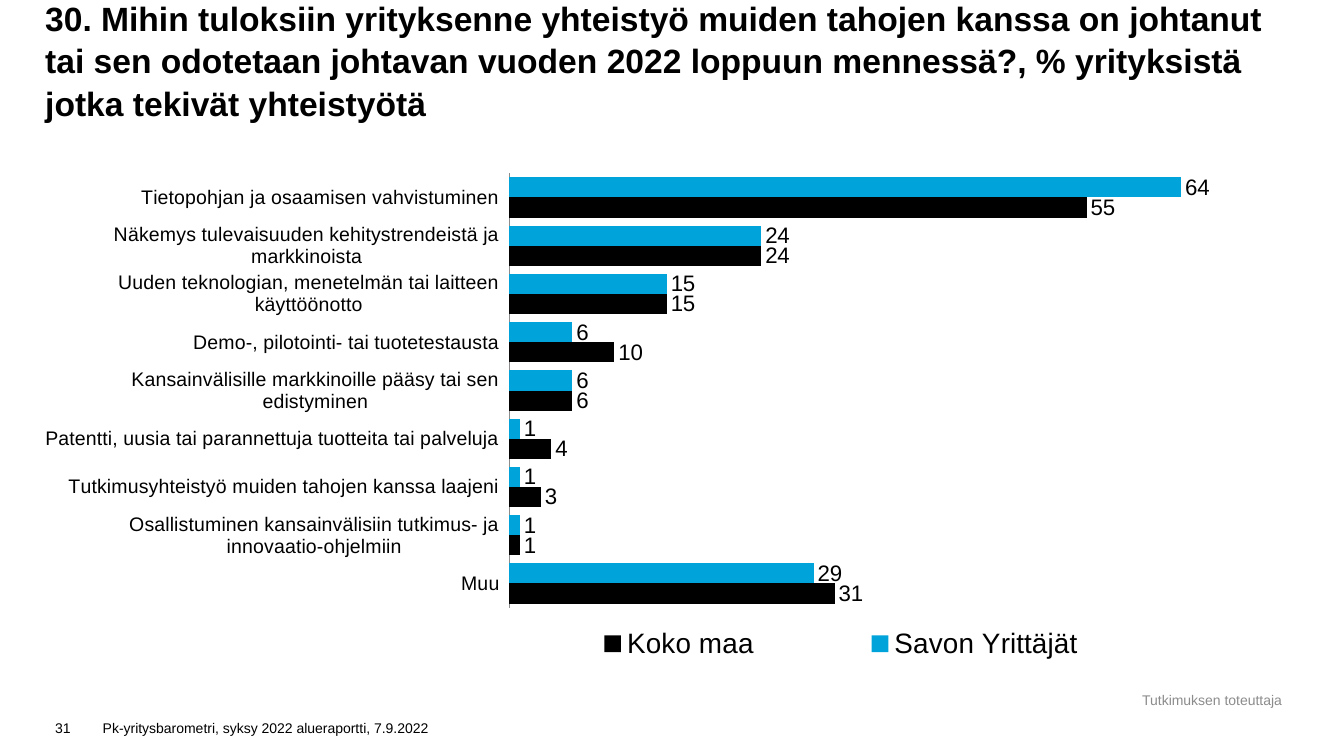
from lxml import etree
from pptx import Presentation
from pptx.chart.data import CategoryChartData
from pptx.dml.color import RGBColor
from pptx.enum.chart import (XL_CHART_TYPE, XL_LABEL_POSITION, XL_LEGEND_POSITION,
                             XL_TICK_LABEL_POSITION, XL_TICK_MARK)
from pptx.enum.text import MSO_ANCHOR, PP_ALIGN
from pptx.oxml.ns import qn
from pptx.util import Cm, Pt

BAR = XL_CHART_TYPE.BAR_CLUSTERED
OUTSIDE = XL_LABEL_POSITION.OUTSIDE_END
RIGHT = XL_LEGEND_POSITION.RIGHT
LOW = XL_TICK_LABEL_POSITION.LOW
NO_TICK = XL_TICK_MARK.NONE
BOTTOM, MIDDLE = MSO_ANCHOR.BOTTOM, MSO_ANCHOR.MIDDLE
LEFT, CENTER = PP_ALIGN.LEFT, PP_ALIGN.CENTER

# Content
TITLE = ("30. Mihin tuloksiin yrityksenne yhteistyö muiden tahojen kanssa on johtanut "
         "tai sen odotetaan johtavan vuoden 2022 loppuun mennessä?, % yrityksistä "
         "jotka tekivät yhteistyötä")
PAGE = "31"
FOOTER = "Pk-yritysbarometri, syksy 2022 alueraportti, 7.9.2022"
CREDIT = "Tutkimuksen toteuttaja"
SERIES = ("Savon Yrittäjät", "Koko maa")
RESULTS = [
    ("Tietopohjan ja osaamisen vahvistuminen", 64, 55),
    ("Näkemys tulevaisuuden kehitystrendeistä ja markkinoista", 24, 24),
    ("Uuden teknologian, menetelmän tai laitteen käyttöönotto", 15, 15),
    ("Demo-, pilotointi- tai tuotetestausta", 6, 10),
    ("Kansainvälisille markkinoille pääsy tai sen edistyminen", 6, 6),
    ("Patentti, uusia tai parannettuja tuotteita tai palveluja", 1, 4),
    ("Tutkimusyhteistyö muiden tahojen kanssa laajeni", 1, 3),
    ("Osallistuminen kansainvälisiin tutkimus- ja innovaatio-ohjelmiin", 1, 1),
    ("Muu", 29, 31),
]

THEME = {
    "font": "Arial",
    "text": RGBColor(0x00, 0x00, 0x00),
    "muted": RGBColor(0x8C, 0x8C, 0x8C),
    "axis": RGBColor(0x8C, 0x8C, 0x8C),
    "series": (RGBColor(0x00, 0xA3, 0xDA), RGBColor(0x00, 0x00, 0x00)),
    "title": Pt(24), "legend": Pt(20), "label": Pt(16), "category": Pt(14), "small": Pt(10),
}

# Geometry in centimetres; chart layouts are fractions of the chart frame
MARGIN, CONTENT_W = 1.14, 31.24
FOOT_TOP, FOOT_H, PAGE_W = 17.78, 0.89, 1.2
PLOT = {"x": 0.371, "y": 0.033, "w": 0.596, "h": 0.842}
LEGEND = {"x": 0.36, "y": 0.9, "w": 0.56, "h": 0.09}


def set_attrs(obj, values):
    for name, value in values.items():
        setattr(obj, name, value)


def set_font(font, size, color=THEME["text"], bold=False):
    set_attrs(font, {"name": THEME["font"], "size": size, "bold": bold})
    font.color.rgb = color


def fill_text(sp, text, size, color=THEME["text"], bold=False, align=LEFT, frame=None):
    tf = sp.text_frame
    set_attrs(tf, {"word_wrap": True, "vertical_anchor": BOTTOM, **(frame or {})})
    p = tf.paragraphs[0]
    p.alignment = align
    r = p.add_run()
    r.text = text
    set_font(r.font, size, color, bold)
    return p


def add_text(slide, box, *args, **kwargs):
    sp = slide.shapes.add_textbox(*map(Cm, box))
    return fill_text(sp, *args, **kwargs)


def set_layout(parent, before, fractions, inner=False):
    """Give a plot area or legend a fixed place inside the chart."""
    for old in parent.findall(qn("c:layout")):
        parent.remove(old)
    layout = etree.Element(qn("c:layout"))
    manual = etree.SubElement(layout, qn("c:manualLayout"))
    entries = [("layoutTarget", "inner")] if inner else []
    entries += [("xMode", "edge"), ("yMode", "edge"), *fractions.items()]
    for tag, value in entries:
        etree.SubElement(manual, qn(f"c:{tag}")).set("val", str(value))
    parent.insert(before, layout)


def add_results_chart(slide):
    data = CategoryChartData(number_format="#,##0")
    names, *columns = zip(*RESULTS)
    data.categories = names
    for name, values in zip(SERIES, columns):
        data.add_series(name, values)
    box = map(Cm, (MARGIN, 3.94, CONTENT_W, 13))
    chart = slide.shapes.add_chart(BAR, *box, data).chart
    set_attrs(chart, {"has_title": False, "has_legend": True})
    set_font(chart.font, THEME["legend"])

    # Bars and value labels
    plot = chart.plots[0]
    set_attrs(plot, {"gap_width": 40, "overlap": 0, "vary_by_categories": False})
    for series, color in zip(plot.series, THEME["series"]):
        series.format.fill.solid()
        series.format.fill.fore_color.rgb = color
        series.invert_if_negative = False
        labels = series.data_labels
        set_attrs(labels, {"show_value": True, "position": OUTSIDE,
                           "number_format": "#,##0", "number_format_is_linked": False})
        set_font(labels.font, THEME["label"])

    # Axes
    cat, val = chart.category_axis, chart.value_axis
    set_attrs(cat, {"reverse_order": True, "major_tick_mark": NO_TICK,
                    "minor_tick_mark": NO_TICK, "tick_label_position": LOW,
                    "has_major_gridlines": False})
    set_font(cat.tick_labels.font, THEME["category"])
    cat.format.line.color.rgb = THEME["axis"]
    cat.format.line.width = Pt(0.75)
    set_attrs(val, {"visible": False, "has_major_gridlines": False,
                    "minimum_scale": 0, "maximum_scale": 70})

    # Legend and fixed layouts
    legend = chart.legend
    set_attrs(legend, {"position": RIGHT, "include_in_layout": False})
    set_font(legend.font, THEME["legend"])
    root = chart.element
    set_layout(root.find(".//" + qn("c:plotArea")), 0, PLOT, inner=True)
    set_layout(root.find(".//" + qn("c:legend")), 1, LEGEND)


def main():
    prs = Presentation()
    set_attrs(prs, {"slide_width": Cm(33.87), "slide_height": Cm(19.05)})
    slide = prs.slides.add_slide(prs.slide_layouts[6])

    # Credit and footer
    add_text(slide, (28.35, 17.32, 4.39, 0.66), CREDIT, THEME["small"], THEME["muted"],
             align=CENTER, frame={"vertical_anchor": MIDDLE})
    add_text(slide, (MARGIN + PAGE_W, FOOT_TOP, 10.59, FOOT_H), FOOTER, THEME["small"])
    add_text(slide, (MARGIN, FOOT_TOP, PAGE_W, FOOT_H), PAGE, THEME["small"])

    # Title
    no_insets = {f"margin_{side}": 0 for side in ("left", "top", "right", "bottom")}
    p = add_text(slide, (MARGIN, 0, CONTENT_W, 3.1), TITLE, THEME["title"], bold=True,
                 frame=no_insets)
    p.line_spacing = 1.05

    add_results_chart(slide)
    prs.save("out.pptx")


if __name__ == "__main__":
    main()
